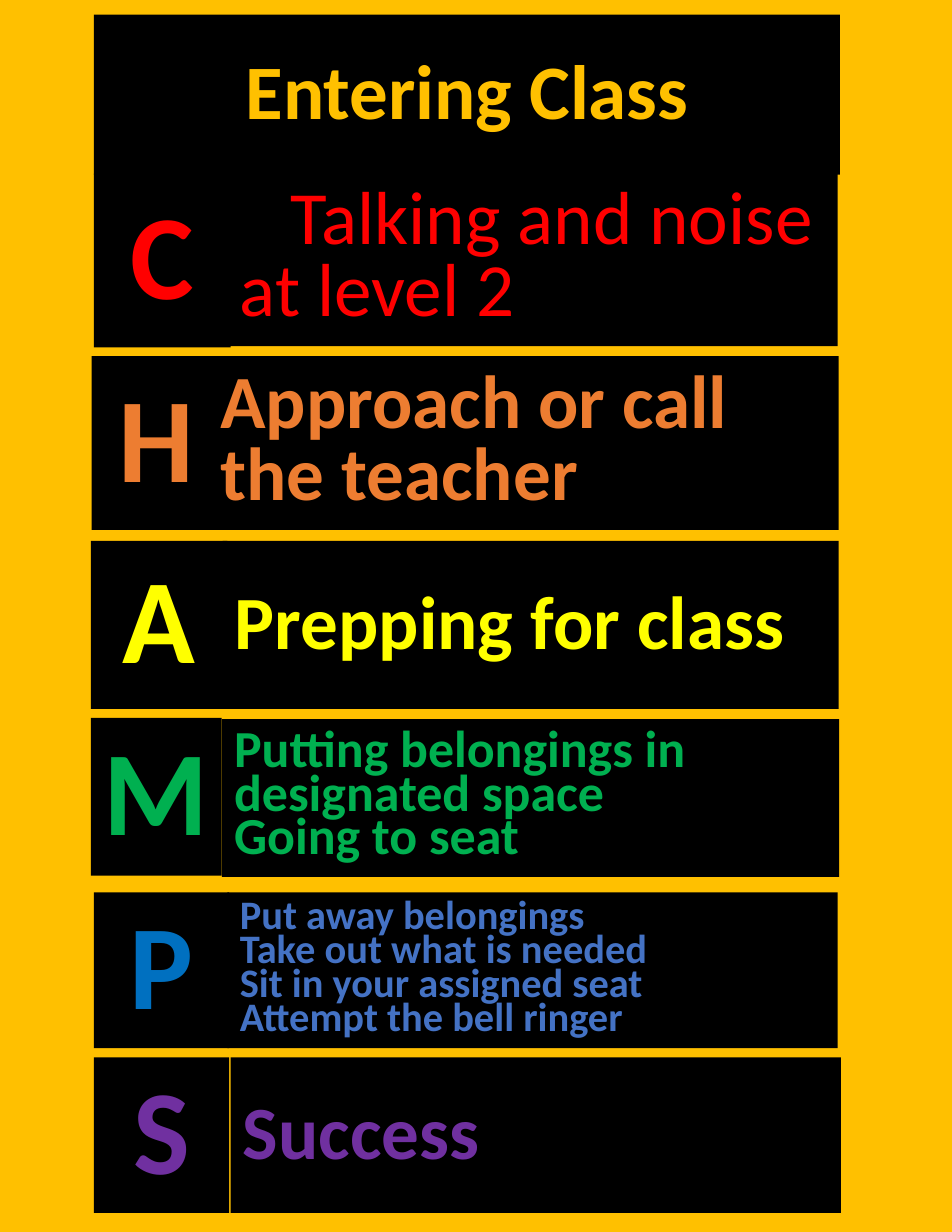
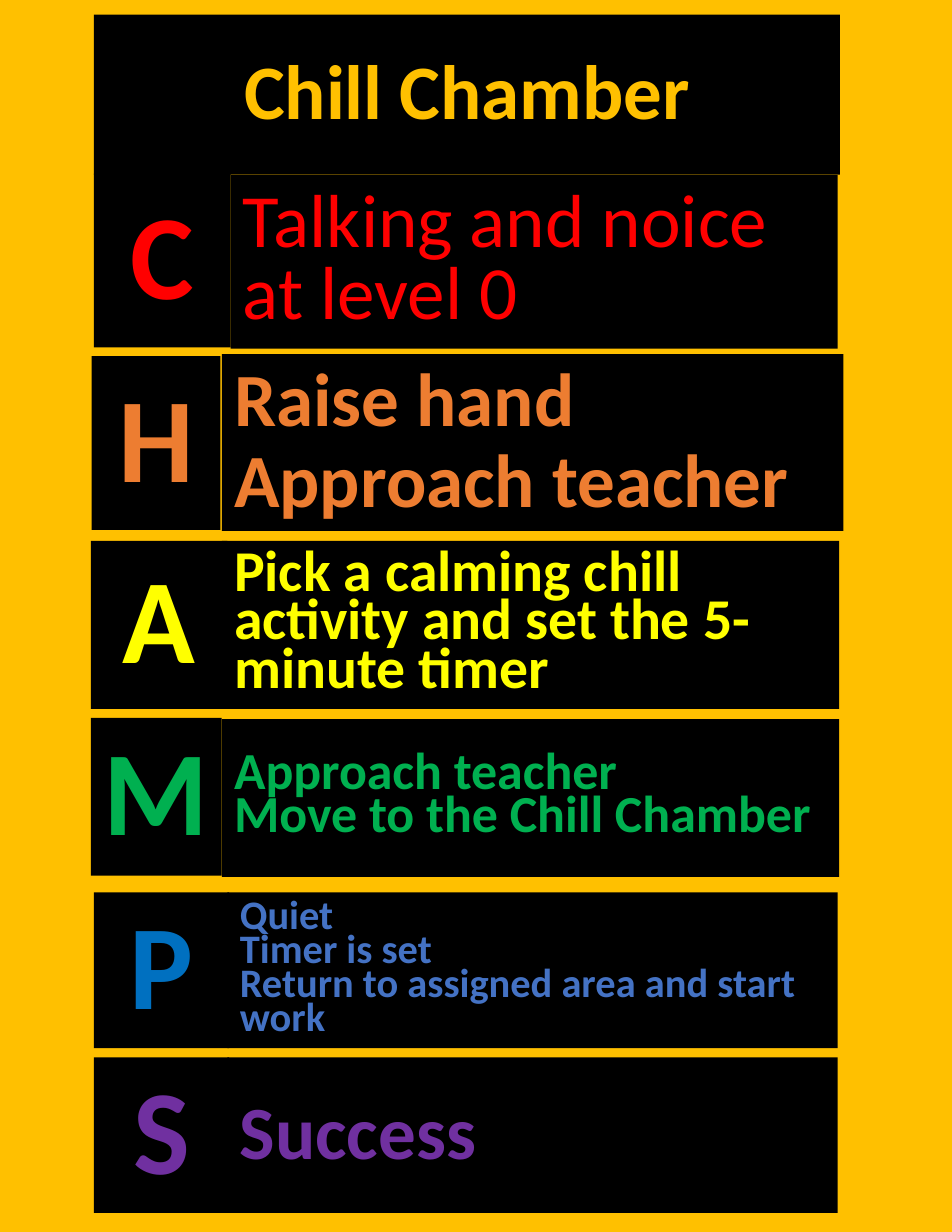
from dataclasses import dataclass

from lxml.etree import SubElement
from pptx import Presentation
from pptx.dml.color import RGBColor
from pptx.enum.shapes import MSO_SHAPE
from pptx.enum.text import MSO_ANCHOR, PP_ALIGN
from pptx.oxml.ns import qn
from pptx.slide import Slide
from pptx.util import Cm, Pt

GOLD, BLACK, LETTER_OUTLINE = "FFC000", "000000", "5B9BD5"
FRAME_FORMAT = {
    "word_wrap": True,
    "vertical_anchor": MSO_ANCHOR.MIDDLE,
    "margin_left": Cm(0.28),
    "margin_right": Cm(0.28),
    "margin_top": Cm(0.15),
    "margin_bottom": Cm(0.15),
}


@dataclass(frozen=True)
class Area:
    left: float
    top: float
    width: float
    height: float


@dataclass(frozen=True)
class TextStyle:
    size: float
    color: str
    outline: str
    spacing: float = 0.9
    bold: bool = True
    align: PP_ALIGN = PP_ALIGN.LEFT
    indent: float = 0


@dataclass(frozen=True)
class Row:
    letter: str
    area: Area
    letter_color: str
    answer_color: str
    answer_outline: str
    answer_bold: bool = True


@dataclass(frozen=True)
class Answer:
    lines: tuple[str, ...]
    left: float
    width: float
    size: float = 48.3
    spacing: float = 0.9
    shift: float = 0
    grow: float = 0
    indent: float = 0


@dataclass(frozen=True)
class Poster:
    title: str
    answers: tuple[Answer, ...]


TITLE_AREA = Area(2.13, 0.33, 16.92, 3.63)
TITLE_STYLE = TextStyle(49.5, GOLD, GOLD, align=PP_ALIGN.CENTER)

ROWS = (
    Row("C", Area(2.13, 3.94, 3.1, 3.94), "FF0000", "FF0000", "FF0000", False),
    Row("H", Area(2.08, 8.08, 2.92, 3.94), "ED7D31", "ED7D31", "F4B183"),
    Row("A", Area(2.06, 12.27, 3.1, 3.81), "FFFF00", "FFFF00", "FFFF00"),
    Row("M", Area(2.06, 16.28, 2.97, 3.58), "00B050", "00B050", "00B050"),
    Row("P", Area(2.13, 20.24, 3.07, 3.53), "0070C0", "4472C4", "4472C4"),
    Row("S", Area(2.13, 23.98, 3.07, 3.53), "7030A0", "7030A0", "7030A0"),
)

POSTERS = (
    Poster("Entering Class", (
        Answer(("Talking and noise at level 2",), 5.16, 13.84,
               spacing=0.8, shift=-0.03, indent=1.15),
        Answer(("Approach or call the teacher",), 4.72, 14.3, spacing=0.8),
        Answer(("Prepping for class",), 5.05, 13.97),
        Answer(("Putting belongings in designated space", "Going to seat"),
               5.03, 14, 33.4, 0.7, 0.03),
        Answer(("Put away belongings", "Take out what is needed",
                "Sit in your assigned seat", "Attempt the bell ringer"),
               5.16, 13.84, 26, 0.7),
        Answer(("Success",), 5.23, 13.84),
    )),
    Poster("Chill Chamber", (
        Answer(("Talking and noice at level 0",), 5.23, 13.77,
               spacing=0.8, shift=0.03),
        Answer(("Raise hand", "Approach teacher"), 5.03, 14.1,
               shift=-0.05, grow=0.07),
        Answer(("Pick a calming chill activity and set the 5-minute timer",),
               5.03, 14, 37.1, 0.7),
        Answer(("Approach teacher", "Move to the Chill Chamber"),
               5.03, 14, 33.4, 0.7, 0.03),
        Answer(("Quiet", "Timer is set", "Return to assigned area and start work"),
               5.16, 13.84, 26, 0.7),
        Answer(("Success",), 5.16, 13.84),
    )),
)


def rgb(color: str) -> RGBColor:
    return RGBColor.from_string(color)


def apply_format(target: object, values: dict[str, object]) -> None:
    for name, value in values.items():
        setattr(target, name, value)


def draw_box(page: Slide, area: Area, lines: tuple[str, ...], style: TextStyle) -> None:
    box = page.shapes.add_shape(
        MSO_SHAPE.RECTANGLE, Cm(area.left), Cm(area.top), Cm(area.width), Cm(area.height))
    box.shadow.inherit = False
    box.fill.solid()
    box.fill.fore_color.rgb = rgb(BLACK)
    box.line.fill.background()
    frame = box.text_frame
    apply_format(frame, FRAME_FORMAT)
    for index, line in enumerate(lines):
        para = frame.add_paragraph() if index else frame.paragraphs[0]
        apply_format(para, {"alignment": style.align, "line_spacing": style.spacing})
        if style.indent:
            para._p.get_or_add_pPr().set("indent", str(Cm(style.indent)))
        span = para.add_run()
        span.text = line
        apply_format(span.font, {"name": "Calibri", "size": Pt(style.size), "bold": style.bold})
        span.font.color.rgb = rgb(style.color)
        outline_text(span, style.outline)


def outline_text(span: object, color: str) -> None:
    properties = span._r.get_or_add_rPr()
    outline = SubElement(properties, qn("a:ln"), w=str(Pt(0.8)))
    fill = SubElement(outline, qn("a:solidFill"))
    SubElement(fill, qn("a:srgbClr"), val=color)
    properties.insert(0, outline)


def draw_answer(page: Slide, row: Row, answer: Answer) -> None:
    area = Area(answer.left, row.area.top + answer.shift,
                answer.width, row.area.height + answer.grow)
    style = TextStyle(answer.size, row.answer_color, row.answer_outline,
                      answer.spacing, row.answer_bold, indent=answer.indent)
    draw_box(page, area, answer.lines, style)


def draw_letter(page: Slide, row: Row) -> None:
    style = TextStyle(77.2, row.letter_color, LETTER_OUTLINE, align=PP_ALIGN.CENTER)
    draw_box(page, row.area, (row.letter,), style)


def draw_poster(page: Slide, poster: Poster) -> None:
    page.background.fill.solid()
    page.background.fill.fore_color.rgb = rgb(GOLD)
    draw_box(page, TITLE_AREA, (poster.title,), TITLE_STYLE)
    for row, answer in zip(ROWS, poster.answers):
        draw_answer(page, row, answer)
    for row in ROWS:
        draw_letter(page, row)


def main() -> None:
    deck = Presentation()
    apply_format(deck, {"slide_width": Cm(21.59), "slide_height": Cm(27.94)})
    for poster in POSTERS:
        draw_poster(deck.slides.add_slide(deck.slide_layouts[6]), poster)
    deck.save("out.pptx")


if __name__ == "__main__":
    main()
